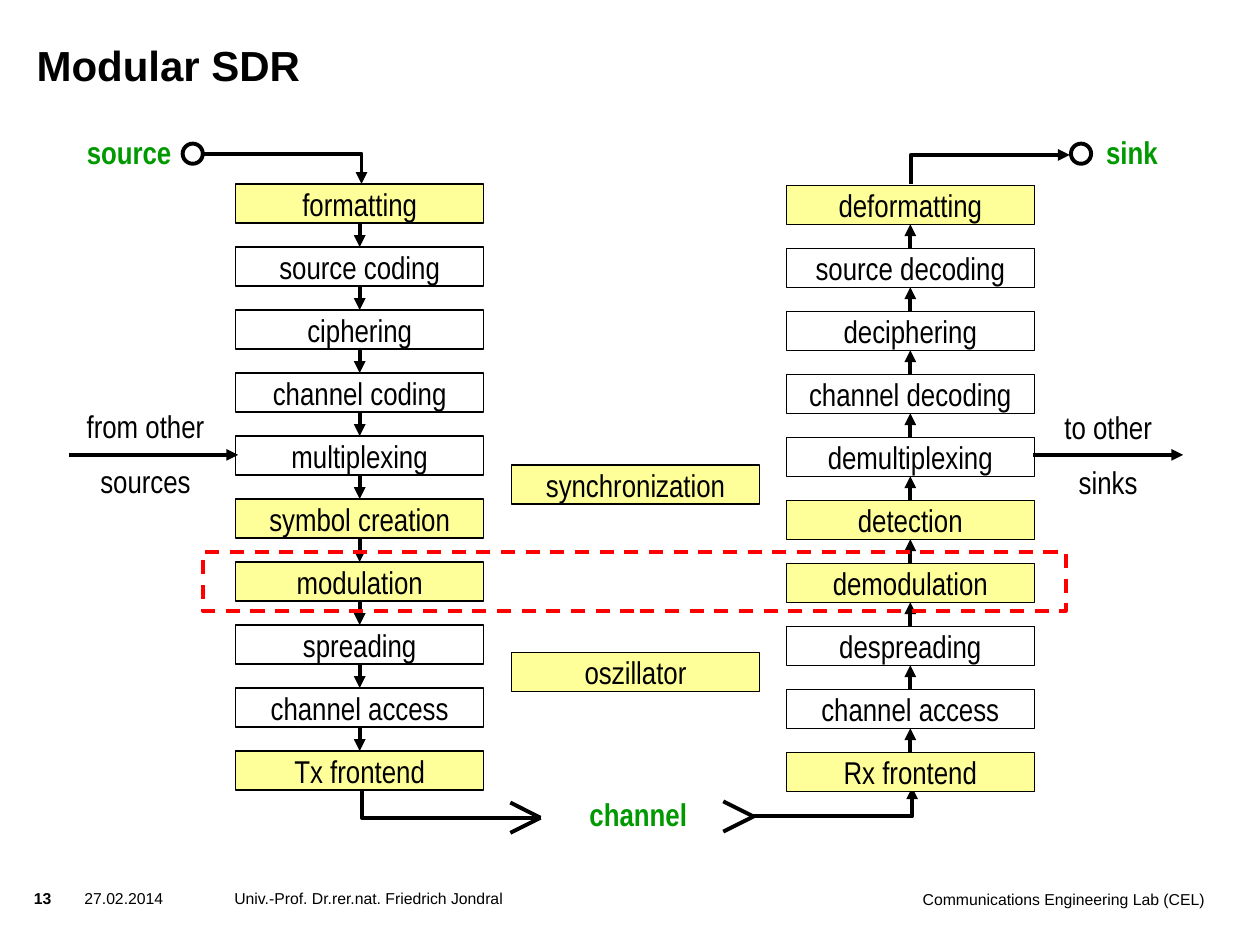
import pptx
import pptx.util
from lxml import etree
from pptx.dml.color import RGBColor
from pptx.enum.dml import MSO_LINE
from pptx.enum.shapes import MSO_CONNECTOR, MSO_SHAPE
from pptx.enum.text import MSO_ANCHOR, MSO_AUTO_SIZE, PP_ALIGN
from pptx.oxml.ns import qn

Inches, Pt = pptx.util.Inches, pptx.util.Pt
BLACK, WHITE, YELLOW, GREEN, RED = "000000", "FFFFFF", "FFFF99", "009900", "FF0000"
LEFT, CENTER, RIGHT = PP_ALIGN.LEFT, PP_ALIGN.CENTER, PP_ALIGN.RIGHT


def color(value):
    return RGBColor.from_string(value)


class Diagram:
    """Style of the diagram and the slide it is drawn on."""
    label_font, page_font = "Arial Narrow", "Arial"
    label_size, page_size, title_size = 18, 9, 24
    thin, thick = 0.75, 2.25
    box_w, box_h, pitch = 1.97, 0.31, 0.5

    def __init__(self, slide):
        self.slide = slide

    def set_text(self, sp, text, font, size, rgb=BLACK, bold=False, align=LEFT, gap=0):
        tf = sp.text_frame
        tf.text = text
        for i, p in enumerate(tf.paragraphs):
            p.alignment = align
            if i:
                p.space_before = Pt(gap)
            for r in p.runs:
                r.font.name, r.font.size, r.font.bold = font, Pt(size), bold
                r.font.color.rgb = color(rgb)
        return tf

    def stroke(self, sp, width, rgb=BLACK, arrow=False):
        sp.line.color.rgb = color(rgb)
        sp.line.width = Pt(width)
        if arrow:
            ln = sp.element.spPr.find(qn("a:ln"))
            etree.SubElement(ln, qn("a:tailEnd"), type="triangle")

    def title(self, text, x, y, w, h):
        sp = self.slide.shapes.title
        sp.left, sp.top, sp.width, sp.height = map(Inches, (x, y, w, h))
        tf = self.set_text(sp, text, self.page_font, self.title_size, bold=True)
        self.no_insets(tf)
        tf.vertical_anchor = MSO_ANCHOR.BOTTOM
        tf.auto_size = MSO_AUTO_SIZE.NONE

    def no_insets(self, tf):
        tf.margin_left = tf.margin_right = tf.margin_top = tf.margin_bottom = 0
        tf.word_wrap = True

    def footer(self, text, x, y, w, h, **style):
        sp = self.slide.shapes.add_textbox(*map(Inches, (x, y, w, h)))
        self.no_insets(self.set_text(sp, text, self.page_font, self.page_size, **style))

    def label(self, text, x, y, w, h, **style):
        sp = self.slide.shapes.add_textbox(*map(Inches, (x, y, w, h)))
        tf = self.set_text(sp, text, self.label_font, self.label_size, **style)
        tf.word_wrap = False

    def shape(self, kind, x, y, w, h, fill, width, rgb=BLACK):
        sp = self.slide.shapes.add_shape(kind, *map(Inches, (x, y, w, h)))
        sp.shadow.inherit = False
        if fill:
            sp.fill.solid()
            sp.fill.fore_color.rgb = color(fill)
        else:
            sp.fill.background()
        self.stroke(sp, width, rgb)
        return sp

    def box(self, text, x, y, fill):
        sp = self.shape(MSO_SHAPE.RECTANGLE, x, y, self.box_w, self.box_h, fill, self.thin)
        tf = self.set_text(sp, text, self.label_font, self.label_size, align=CENTER)
        tf.vertical_anchor = MSO_ANCHOR.MIDDLE
        tf.word_wrap = False

    def terminal(self, x, y):
        self.shape(MSO_SHAPE.OVAL, x, y, 0.16, 0.16, WHITE, self.thick)

    def line(self, x1, y1, x2, y2, arrow=False):
        sp = self.slide.shapes.add_connector(
            MSO_CONNECTOR.STRAIGHT, *map(Inches, (x1, y1, x2, y2)))
        self.stroke(sp, self.thick, arrow=arrow)
        etree.SubElement(sp.element.spPr, qn("a:effectLst"))

    def elbow(self, points, arrow=True):
        start, *rest = [(Inches(x), Inches(y)) for x, y in points]
        builder = self.slide.shapes.build_freeform(*start)
        builder.add_line_segments(rest, close=False)
        sp = builder.convert_to_shape()
        sp.shadow.inherit = False
        sp.fill.background()
        self.stroke(sp, self.thick, arrow=arrow)

    def antenna(self, x, y):
        for dy in (-0.12, 0.12):
            self.line(x, y, x - 0.24, y + dy)

    def chain(self, names, highlighted, x, y, downward):
        for i, name in enumerate(names):
            self.box(name, x, y + i * self.pitch, YELLOW if i in highlighted else WHITE)
        mid = x + self.box_w / 2
        for i in range(len(names) - 1):
            upper = y + i * self.pitch + self.box_h
            lower = y + (i + 1) * self.pitch
            ends = (upper, lower) if downward else (lower, upper)
            self.line(mid, ends[0], mid, ends[1], arrow=True)


prs = pptx.Presentation()
prs.slide_width, prs.slide_height = Inches(10), Inches(7.5)
d = Diagram(prs.slides.add_slide(prs.slide_layouts[5]))

# Title and footer
d.title("Modular SDR", 0.29, 0.14, 4.38, 0.57)
d.footer("13", 0.27, 7.05, 0.36, 0.24, bold=True)
d.footer("27.02.2014", 0.67, 7.05, 0.94, 0.39)
d.footer("Univ.-Prof. Dr.rer.nat. Friedrich Jondral", 1.86, 7.05, 4.65, 0.39)
d.footer("Communications Engineering Lab (CEL)", 6.57, 7.06, 2.99, 0.39, align=RIGHT)

# Shared blocks
d.box("synchronization", 4.06, 3.69, YELLOW)
d.box("oszillator", 4.06, 5.18, YELLOW)

# Source, sink and channel
for text, x, y, w in (("source", 0.59, 1.01, 0.88), ("sink", 8.68, 1.01, 0.62),
                      ("channel", 4.58, 6.26, 0.99)):
    d.label(text, x, y, w, 0.4, rgb=GREEN, bold=True)
d.elbow([(1.61, 1.22), (2.87, 1.22), (2.87, 1.46)])
d.terminal(1.45, 1.14)
d.elbow([(7.23, 1.46), (7.23, 1.23), (8.49, 1.23)])
d.terminal(8.5, 1.14)
d.elbow([(2.87, 6.26), (2.87, 6.49), (4.29, 6.49)], arrow=False)
d.antenna(4.29, 6.49)
d.elbow([(5.98, 6.48), (7.24, 6.48), (7.24, 6.25)])
d.antenna(5.98, 6.48)

# Transmitter and receiver chains
highlighted = {0, 5, 6, 9}
d.chain(["formatting", "source coding", "ciphering", "channel coding", "multiplexing",
         "symbol creation", "modulation", "spreading", "channel access", "Tx frontend"],
        highlighted, 1.87, 1.46, downward=True)
d.chain(["deformatting", "source decoding", "deciphering", "channel decoding",
         "demultiplexing", "detection", "demodulation", "despreading", "channel access",
         "Rx frontend"],
        highlighted, 6.24, 1.47, downward=False)

# Other sources and sinks
d.line(0.55, 3.61, 1.89, 3.61, arrow=True)
d.line(8.2, 3.61, 9.39, 3.61, arrow=True)
d.label("from other\nsources", 0.58, 3.18, 1.15, 0.86, align=CENTER, gap=10)
d.label("to other\nsinks", 8.34, 3.19, 0.91, 0.86, align=CENTER, gap=10)

# Frame around modulation and demodulation
frame = d.shape(MSO_SHAPE.RECTANGLE, 1.61, 4.38, 6.85, 0.47, None, 2, RED)
frame.line.dash_style = MSO_LINE.DASH

prs.save("out.pptx")
